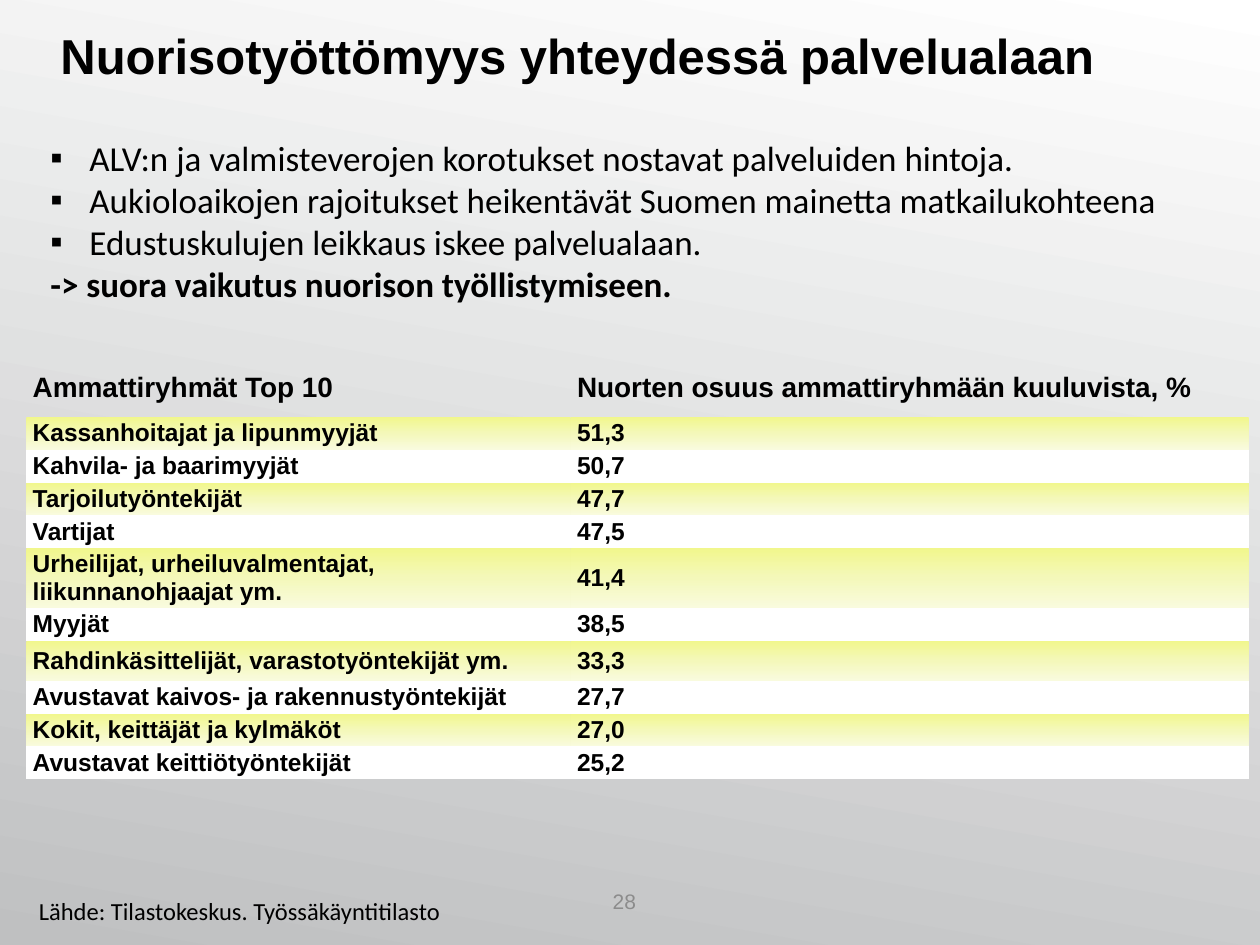
from lxml.etree import SubElement
from pptx import Presentation
from pptx.dml.color import RGBColor
from pptx.enum.text import MSO_ANCHOR, MSO_AUTO_SIZE, PP_ALIGN
from pptx.oxml.ns import qn
from pptx.util import Inches, Pt

TITLE = "Nuorisotyöttömyys yhteydessä palvelualaan"
BULLETS = [
    "ALV:n ja valmisteverojen korotukset nostavat palveluiden hintoja.",
    "Aukioloaikojen rajoitukset heikentävät Suomen mainetta matkailukohteena",
    "Edustuskulujen leikkaus iskee palvelualaan.",
]
CONCLUSION = "-> suora vaikutus nuorison työllistymiseen."
HEADER = ("Ammattiryhmät Top 10", "Nuorten osuus ammattiryhmään kuuluvista, %")
GROUPS = [
    ("Kassanhoitajat ja lipunmyyjät", "51,3"),
    ("Kahvila- ja baarimyyjät", "50,7"),
    ("Tarjoilutyöntekijät", "47,7"),
    ("Vartijat", "47,5"),
    ("Urheilijat, urheiluvalmentajat, liikunnanohjaajat ym.", "41,4"),
    ("Myyjät", "38,5"),
    ("Rahdinkäsittelijät, varastotyöntekijät ym.", "33,3"),
    ("Avustavat kaivos- ja rakennustyöntekijät", "27,7"),
    ("Kokit, keittäjät ja kylmäköt", "27,0"),
    ("Avustavat keittiötyöntekijät", "25,2"),
]
SOURCE = "Lähde: Tilastokeskus. Työssäkäyntitilasto"
PAGE_NUMBER = "28"

COLUMN_WIDTHS = (4.32, 5.38)
HEADER_HEIGHT, ROW_HEIGHT = 0.47, 0.26
SPECIAL_HEIGHTS = {4: 0.23, 5: 0.35, 7: 0.32}
BACKGROUND_STOPS = [(0, "FFFFFF"), (100, "BFC0C1")]
BAND_STOPS = [(0, "F1F78C"), (50, "F4F8BA"), (100, "F9FBDE")]
NO_STYLE = "{2D5ABB26-0587-4C30-8999-92F81FD0307C}"


def color(value):
    return RGBColor.from_string(value)


def set_gradient(fill, owner, stops, angle):
    """Fill with a linear gradient; owner is the XML element that holds the fill."""
    fill.solid()
    solid = owner.find(qn("a:solidFill"))
    gradient = owner.makeelement(qn("a:gradFill"), {"rotWithShape": "1"})
    stop_list = SubElement(gradient, qn("a:gsLst"))
    for position, value in stops:
        stop = SubElement(stop_list, qn("a:gs"), pos=str(position * 1000))
        SubElement(stop, qn("a:srgbClr"), val=value)
    SubElement(gradient, qn("a:lin"), ang=str(angle * 60000), scaled="0")
    owner.replace(solid, gradient)


def write(para, text, size, font="Arial", bold=False, value="000000", align=PP_ALIGN.LEFT):
    para.alignment = align
    para.space_before = Pt(0)
    span = para.add_run()
    span.text = text
    span.font.size = Pt(size)
    span.font.name = font
    span.font.bold = bold
    span.font.color.rgb = color(value)


def set_bullet(para, character=None, indent=0.0):
    properties = para._p.get_or_add_pPr()
    properties.set("marL", str(Inches(indent)))
    properties.set("indent", str(-Inches(indent)))
    if character:
        SubElement(properties, qn("a:buFont"), typeface="Arial")
        SubElement(properties, qn("a:buChar"), char=character)
    else:
        SubElement(properties, qn("a:buNone"))


def place(shape, left, top, width, height, anchor=MSO_ANCHOR.TOP, wrap=True):
    shape.left, shape.top = Inches(left), Inches(top)
    shape.width, shape.height = Inches(width), Inches(height)
    frame = shape.text_frame
    frame.auto_size = MSO_AUTO_SIZE.NONE
    frame.word_wrap = wrap
    frame.vertical_anchor = anchor
    return frame


def add_text(page, area, text, size, anchor=MSO_ANCHOR.TOP, wrap=True, **style):
    box = page.shapes.add_textbox(0, 0, 0, 0)
    frame = place(box, *area, anchor=anchor, wrap=wrap)
    write(frame.paragraphs[0], text, size, **style)


def add_bullets(body):
    frame = place(body, 0.3, 1.03, 9.24, 1.45)
    for index, text in enumerate(BULLETS + [CONCLUSION]):
        para = frame.paragraphs[0] if index == 0 else frame.add_paragraph()
        is_bullet = index < len(BULLETS)
        if is_bullet:
            set_bullet(para, "▪", 0.31)
        else:
            set_bullet(para)
        write(para, text, 20, font="Calibri", bold=not is_bullet)


def add_groups_table(page):
    rows = [HEADER] + GROUPS
    heights = [HEADER_HEIGHT] + [
        SPECIAL_HEIGHTS.get(number, ROW_HEIGHT) for number in range(1, len(rows))
    ]
    frame = page.shapes.add_table(
        len(rows), len(HEADER), Inches(0.21), Inches(2.84),
        Inches(sum(COLUMN_WIDTHS)), Inches(sum(heights)),
    )
    table = frame.table
    table.first_row = table.horz_banding = False
    table._tbl.tblPr.find(qn("a:tableStyleId")).text = NO_STYLE
    for column, width in zip(table.columns, COLUMN_WIDTHS):
        column.width = Inches(width)
    for number, (texts, height) in enumerate(zip(rows, heights)):
        table.rows[number].height = Inches(height)
        for cell, text in zip(table.rows[number].cells, texts):
            cell.margin_left = cell.margin_right = Inches(0.05)
            cell.margin_top = cell.margin_bottom = Inches(0.02)
            cell.vertical_anchor = MSO_ANCHOR.MIDDLE
            if number == 0:
                cell.fill.background()
            elif number % 2:
                set_gradient(cell.fill, cell._tc.tcPr, BAND_STOPS, 90)
            else:
                cell.fill.solid()
                cell.fill.fore_color.rgb = color("FFFFFF")
            write(cell.text_frame.paragraphs[0], text, 14 if number else 16, bold=True)


def main():
    deck = Presentation()
    deck.slide_width, deck.slide_height = Inches(10), Inches(7.5)
    page = deck.slides.add_slide(deck.slide_layouts[1])
    background = page.background.fill
    background.solid()
    set_gradient(background, page.element.find(".//" + qn("p:bgPr")), BACKGROUND_STOPS, 100)

    title = place(page.shapes.title, 0.38, 0.15, 8.51, 0.57, wrap=False)
    write(title.paragraphs[0], TITLE, 28, bold=True)
    add_bullets(page.placeholders[1])
    add_groups_table(page)
    add_text(page, (0.21, 7.06, 3.43, 0.34), SOURCE, 14, font="Calibri", wrap=False)
    add_text(page, (3.79, 6.95, 2.33, 0.4), PAGE_NUMBER, 12, value="8C8C8C",
             anchor=MSO_ANCHOR.MIDDLE, align=PP_ALIGN.CENTER)
    deck.save("out.pptx")


if __name__ == "__main__":
    main()
